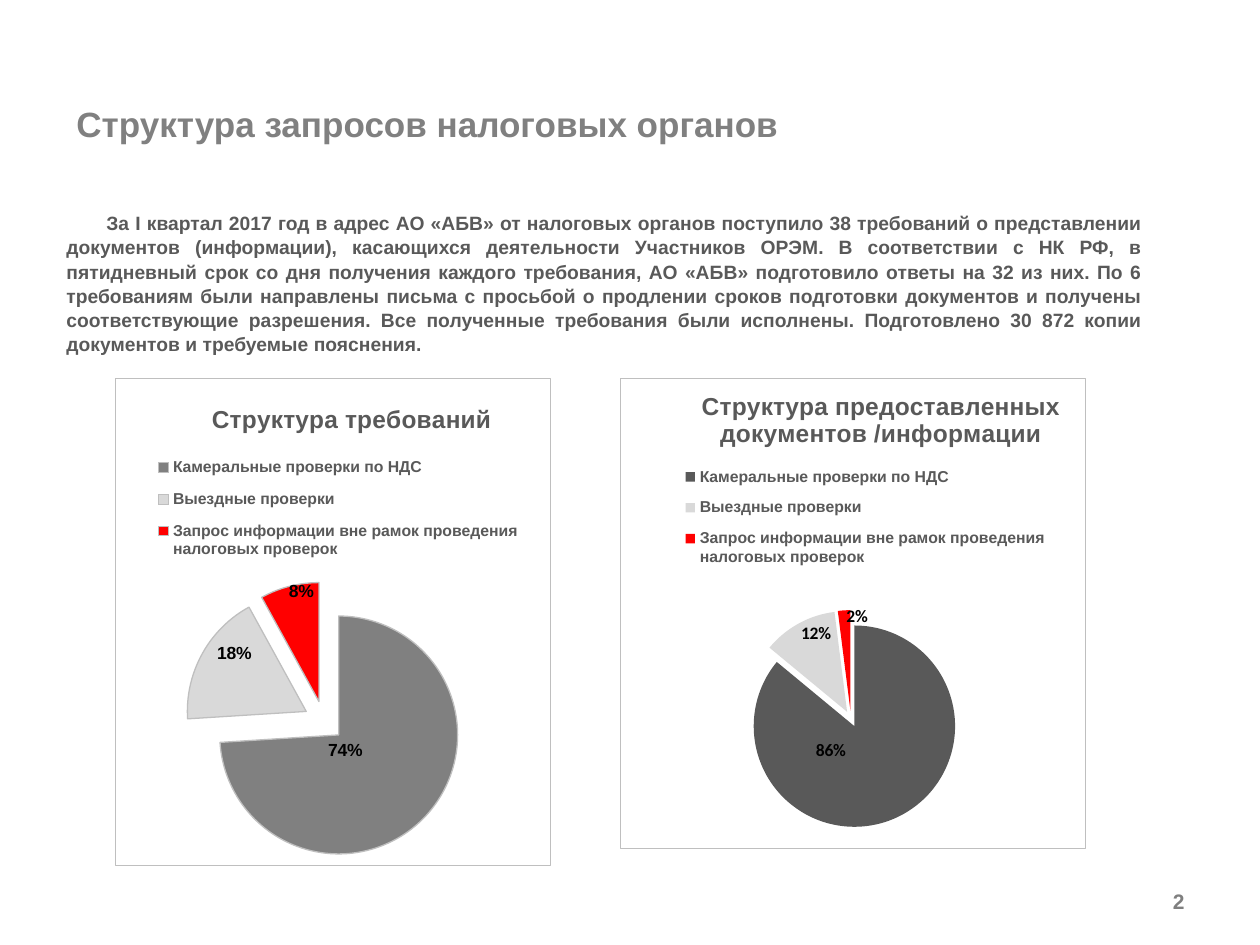
from lxml.etree import SubElement
from pptx import Presentation
from pptx.chart.data import CategoryChartData
from pptx.dml.color import RGBColor
from pptx.enum.chart import XL_CHART_TYPE, XL_LABEL_POSITION, XL_LEGEND_POSITION
from pptx.enum.text import MSO_ANCHOR, PP_ALIGN
from pptx.oxml import parse_xml
from pptx.oxml.ns import nsdecls, qn
from pptx.util import Emu, Pt

HEADING = "Структура запросов налоговых органов"
SUMMARY = (
    "За I квартал 2017 год в адрес АО «АБВ» от налоговых органов поступило 38 требований "
    "о представлении документов (информации), касающихся деятельности Участников ОРЭМ. "
    "В соответствии с НК РФ, в пятидневный срок со дня получения каждого требования, "
    "АО «АБВ» подготовило ответы на 32 из них. По 6 требованиям были направлены письма "
    "с просьбой о продлении сроков подготовки документов и получены соответствующие "
    "разрешения. Все полученные требования были исполнены. Подготовлено 30 872 копии "
    "документов и требуемые пояснения."
)
REQUEST_KINDS = [
    "Камеральные проверки по НДС",
    "Выездные проверки",
    "Запрос информации вне рамок проведения налоговых проверок",
]
DARK, GREY, LIGHT, RED = "595959", "808080", "D9D9D9", "FF0000"
BORDER = "BFBFBF"


def px(length):
    return Emu(round(length * 914400 / 126))


def rgb(color):
    return RGBColor.from_string(color)


def style(font, size, color, name="Arial"):
    font.name, font.size, font.bold = name, Pt(size), True
    font.color.rgb = rgb(color)


def add_text(slide, box, text, size, color, align=PP_ALIGN.LEFT, anchor=MSO_ANCHOR.MIDDLE):
    frame = slide.shapes.add_textbox(*map(px, box)).text_frame
    frame.word_wrap = True
    frame.vertical_anchor = anchor
    paragraph = frame.paragraphs[0]
    paragraph.text = text
    paragraph.alignment = align
    style(paragraph.font, size, color)
    return paragraph


def place(part, index, **fractions):
    """Give a chart part a manual layout in fractions of the chart, as child number index."""
    for old in part.findall(qn("c:layout")):
        part.remove(old)
    layout = parse_xml(f"<c:layout {nsdecls('c')}><c:manualLayout/></c:layout>")
    for tag, value in fractions.items():
        SubElement(layout[0], qn(f"c:{tag}")).set("val", str(value))
    part.insert(index, layout)


def edges(frame, box):
    """Turn a slide box, or just its corner, into edge-based layout fractions."""
    left, top, width, height = frame
    fractions = {
        "xMode": "edge",
        "yMode": "edge",
        "x": round((box[0] - left) / width, 3),
        "y": round((box[1] - top) / height, 3),
    }
    if len(box) == 4:
        fractions.update(w=round(box[2] / width, 3), h=round(box[3] / height, 3))
    return fractions


def add_border(chart):
    outline = parse_xml(
        f"<c:spPr {nsdecls('c', 'a')}><a:noFill/><a:ln w='9525'><a:solidFill>"
        f"<a:srgbClr val='{BORDER}'/></a:solidFill></a:ln></c:spPr>"
    )
    chart.element.find(qn("c:chart")).addnext(outline)


def explode(series, percent):
    explosion = parse_xml(f"<c:explosion {nsdecls('c')} val='{percent}'/>")
    series._element.find(qn("c:dPt")).addprevious(explosion)


def add_percent_labels(series, frame, label_shifts, font_name):
    labels = series.data_labels
    labels.show_percentage, labels.show_value = True, False
    labels.position = XL_LABEL_POSITION.CENTER
    style(labels.font, 10, "000000", font_name)
    for index in range(len(label_shifts)):
        label = series.points[index].data_label
        style(label.font, 10, "000000", font_name)
        label.position = XL_LABEL_POSITION.CENTER
    for entry, (right, down) in zip(series._element.iter(qn("c:dLbl")), label_shifts):
        entry.find(qn("c:showVal")).set("val", "0")
        entry.find(qn("c:showPercent")).set("val", "1")
        place(entry, 1, x=round(right / frame[2], 3), y=round(down / frame[3], 3))


def add_pie(slide, frame, title, title_at, legend_box, pie_box, shares, colors,
            explosion, label_shifts, label_font="Arial", outlined=False):
    data = CategoryChartData()
    data.categories = REQUEST_KINDS
    data.add_series("Series 1", shares)
    chart = slide.shapes.add_chart(XL_CHART_TYPE.PIE, *map(px, frame), data).chart
    style(chart.font, 10, DARK)
    add_border(chart)

    chart.has_title = True
    heading = chart.chart_title.text_frame.paragraphs[0]
    heading.text = title
    style(heading.font, 14, DARK)
    chart.has_legend = True
    chart.legend.position = XL_LEGEND_POSITION.TOP
    chart.legend.include_in_layout = False
    style(chart.legend.font, 9, DARK)

    series = chart.plots[0].series[0]
    for index, color in enumerate(colors):
        sector = series.points[index].format
        sector.fill.solid()
        sector.fill.fore_color.rgb = rgb(color)
        if outlined:
            sector.line.color.rgb = rgb(BORDER)
            sector.line.width = Pt(0.75)
        else:
            sector.line.fill.background()
    explode(series, explosion)
    add_percent_labels(series, frame, label_shifts, label_font)

    body = chart.element.find(qn("c:chart"))
    place(body.find(qn("c:title")), 1, **edges(frame, title_at))
    place(body.find(qn("c:legend")), 1, **edges(frame, legend_box))
    place(body.find(qn("c:plotArea")), 0, layoutTarget="inner", **edges(frame, pie_box))


def main():
    deck = Presentation()
    deck.slide_width, deck.slide_height = px(1260), px(945)
    slide = deck.slides.add_slide(deck.slide_layouts[6])

    add_text(slide, (64, 96, 1101, 93), HEADING, 20, GREY, anchor=MSO_ANCHOR.TOP)
    summary = add_text(slide, (54, 204, 1101, 158), SUMMARY, 11, DARK, PP_ALIGN.JUSTIFY)
    summary.line_spacing = 1.05
    summary._p.get_or_add_pPr().set("indent", str(px(40)))

    add_pie(
        slide, (115, 378, 436, 488), "Структура требований", (207, 398),
        legend_box=(146, 445, 384, 127), pie_box=(125, 582, 398, 279),
        shares=(74, 18, 8), colors=(GREY, LIGHT, RED), explosion=17,
        label_shifts=((-37, -25), (-20, -29), (-3, -52)), outlined=True,
    )
    add_pie(
        slide, (620, 378, 466, 471),
        "Структура предоставленных документов /информации", (697, 385),
        legend_box=(670, 455, 390, 124), pie_box=(658, 610, 386, 218),
        shares=(86, 12, 2), colors=(DARK, LIGHT, RED), explosion=8,
        label_shifts=((-45, -21), (-7, -34), (10, -44)), label_font="Calibri",
    )
    add_text(slide, (903, 876, 294, 50), "2", 12, "7F7F7F", PP_ALIGN.RIGHT)
    deck.save("out.pptx")


if __name__ == "__main__":
    main()
